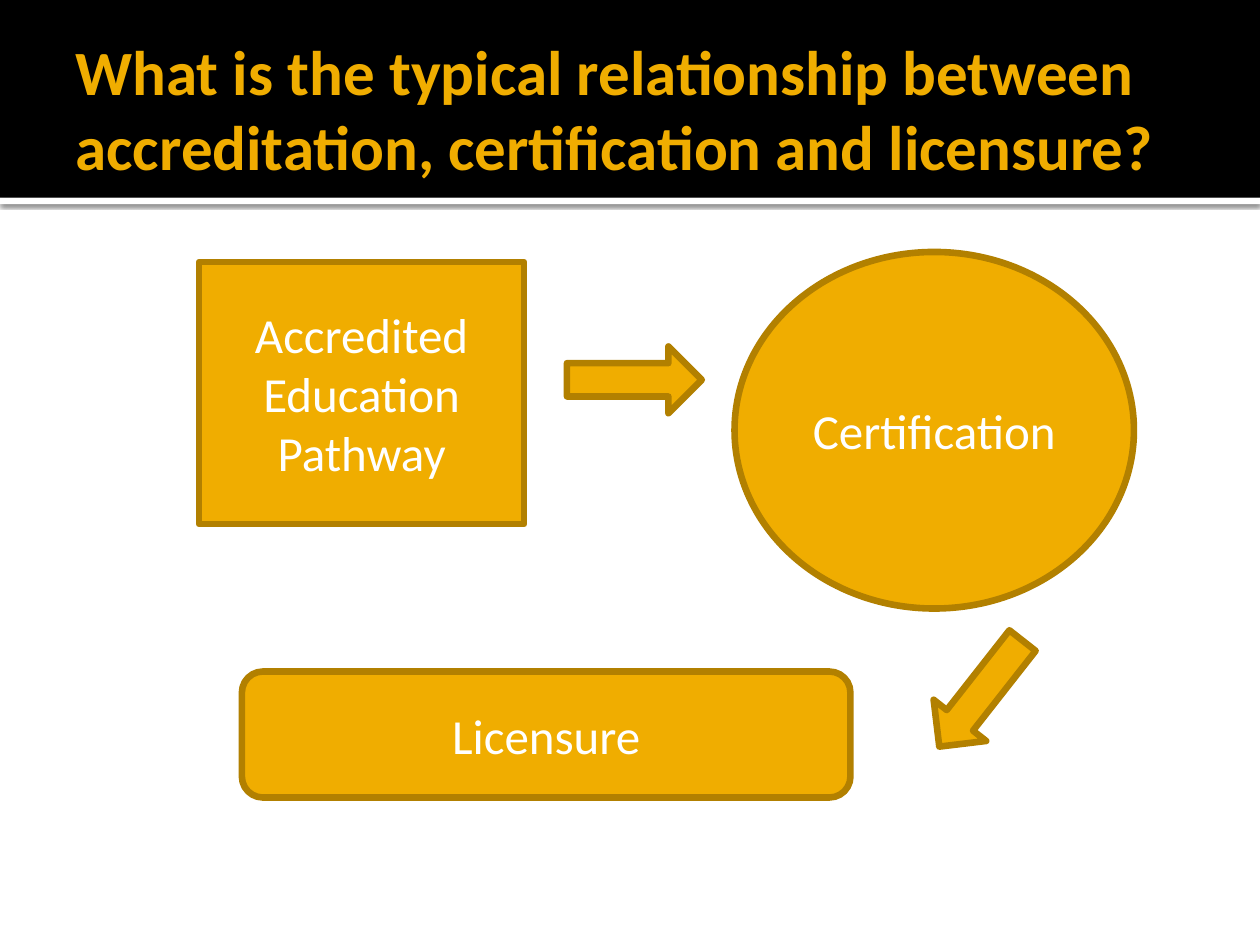
"""Build a slide relating accreditation, certification and licensure."""
from typing import NamedTuple

from lxml.etree import SubElement
from pptx import Presentation
from pptx.dml.color import RGBColor
from pptx.enum.shapes import MSO_SHAPE
from pptx.enum.text import MSO_ANCHOR, MSO_AUTO_SIZE, PP_ALIGN
from pptx.oxml.ns import qn
from pptx.shapes.autoshape import Shape
from pptx.slide import Slide
from pptx.util import Inches, Pt

BLACK = RGBColor(0x00, 0x00, 0x00)
WHITE = RGBColor(0xFF, 0xFF, 0xFF)
GOLD = RGBColor(0xF0, 0xAD, 0x00)
DARK_GOLD = RGBColor(0xB2, 0x80, 0x00)
FONT = "Calibri"


class Box(NamedTuple):
    left: float
    top: float
    width: float
    height: float


class Step(NamedTuple):
    outline: MSO_SHAPE
    box: Box
    lines: tuple[str, ...] = ()
    rotation: float = 0


STEPS = (
    Step(MSO_SHAPE.RECTANGLE, Box(1.58, 2.08, 2.58, 2.08),
         ("Accredited Education", "Pathway")),
    Step(MSO_SHAPE.OVAL, Box(5.83, 2, 3.17, 2.83), ("Certification",)),
    Step(MSO_SHAPE.ROUNDED_RECTANGLE, Box(1.92, 5.33, 4.83, 1), ("Licensure",)),
    Step(MSO_SHAPE.RIGHT_ARROW, Box(4.5, 2.75, 1.07, 0.53)),
    Step(MSO_SHAPE.DOWN_ARROW, Box(7.52, 4.97, 0.53, 1.07), rotation=38.1),
)


def add_filled(slide: Slide, outline: MSO_SHAPE, box: Box, color: RGBColor) -> Shape:
    shape = slide.shapes.add_shape(outline, *map(Inches, box))
    shape.shadow.inherit = False
    shape.fill.solid()
    shape.fill.fore_color.rgb = color
    shape.line.fill.background()
    return shape


def add_drop_shadow(shape: Shape) -> None:
    effects = shape.element.spPr.find(qn("a:effectLst"))
    shadow = SubElement(effects, qn("a:outerShdw"), blurRad=str(Pt(2.5)),
                        dist=str(Pt(0.8)), dir="5400000", algn="tl", rotWithShape="0")
    color = SubElement(shadow, qn("a:srgbClr"), val=str(BLACK))
    SubElement(color, qn("a:alpha"), val="60000")


def add_step(slide: Slide, step: Step) -> None:
    shape = add_filled(slide, step.outline, step.box, GOLD)
    shape.rotation = step.rotation
    shape.line.color.rgb = DARK_GOLD
    shape.line.width = Pt(3.78)
    if not step.lines:
        return
    frame = shape.text_frame
    frame.text = "\n".join(step.lines)
    frame.word_wrap = True
    frame.vertical_anchor = MSO_ANCHOR.MIDDLE
    for paragraph in frame.paragraphs:
        paragraph.alignment = PP_ALIGN.CENTER
        paragraph.font.name = FONT
        paragraph.font.size = Pt(28)
        paragraph.font.color.rgb = WHITE


def add_heading(slide: Slide, wording: str) -> None:
    heading = slide.shapes.title
    heading.left, heading.top, heading.width, heading.height = map(
        Inches, Box(0.5, 0.17, 9.5, 1.37))
    frame = heading.text_frame
    frame.text = wording
    frame.word_wrap = True
    frame.auto_size = MSO_AUTO_SIZE.NONE
    frame.vertical_anchor = MSO_ANCHOR.MIDDLE
    frame.margin_left = Inches(0.1)
    frame.margin_top = frame.margin_right = frame.margin_bottom = Inches(0.05)
    paragraph = frame.paragraphs[0]
    paragraph.alignment = PP_ALIGN.LEFT
    paragraph.font.name = FONT
    paragraph.font.size = Pt(36)
    paragraph.font.bold = True
    paragraph.font.color.rgb = GOLD
    heading.element.getparent().append(heading.element)


def main() -> None:
    deck = Presentation()
    deck.slide_width, deck.slide_height = Inches(10), Inches(7.5)
    slide = deck.slides.add_slide(deck.slide_layouts[5])
    stripe = add_filled(slide, MSO_SHAPE.RECTANGLE, Box(0, 1.57, 10, 0.05), WHITE)
    add_drop_shadow(stripe)
    add_filled(slide, MSO_SHAPE.RECTANGLE, Box(0, 0, 10, 1.57), BLACK)
    add_heading(slide, "What is the typical relationship between "
                       "accreditation, certification and licensure?")
    for step in STEPS:
        add_step(slide, step)
    deck.save("out.pptx")


if __name__ == "__main__":
    main()
